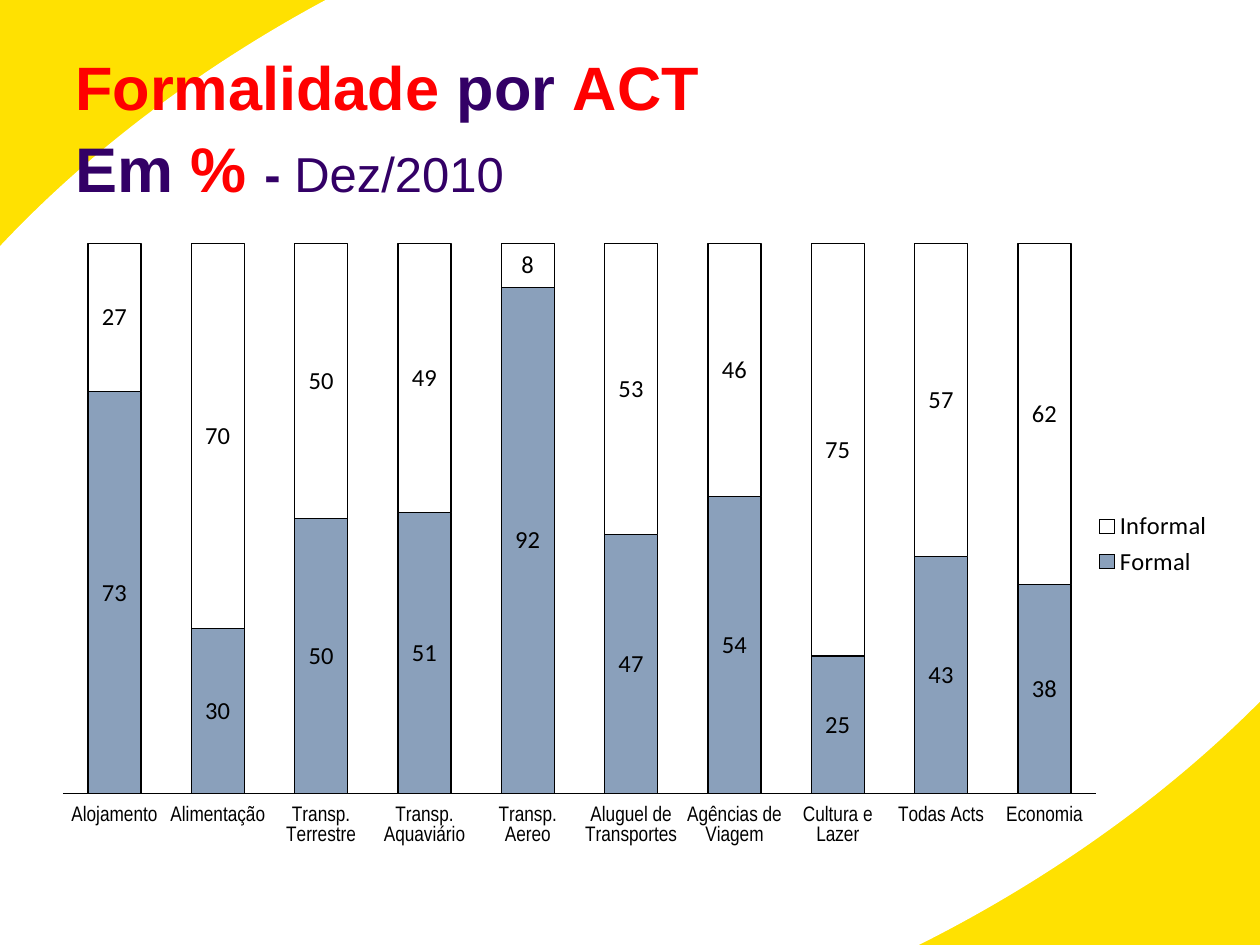
from dataclasses import dataclass

from lxml import etree
from pptx import Presentation
from pptx.chart.data import CategoryChartData
from pptx.dml.color import RGBColor
from pptx.enum.chart import (XL_CHART_TYPE, XL_LEGEND_POSITION, XL_TICK_LABEL_POSITION,
                             XL_TICK_MARK)
from pptx.enum.shapes import MSO_SHAPE
from pptx.enum.text import MSO_ANCHOR
from pptx.oxml import parse_xml
from pptx.oxml.ns import nsdecls, qn
from pptx.util import Pt

STACKED_100 = XL_CHART_TYPE.COLUMN_STACKED_100
LEGEND_RIGHT = XL_LEGEND_POSITION.RIGHT
TICK_NONE = XL_TICK_MARK.NONE
LABELS_LOW = XL_TICK_LABEL_POSITION.LOW
ELLIPSE = MSO_SHAPE.OVAL
TOP = MSO_ANCHOR.TOP
EMU_PER_PX = 914400 / 126


@dataclass(frozen=True)
class Theme:
    yellow: str = "FFE101"
    white: str = "FFFFFF"
    black: str = "000000"
    red: str = "FF0000"
    purple: str = "330066"
    blue: str = "1F497D"
    blue_opacity: int = 52
    title_font: str = "Arial"
    chart_font: str = "Calibri"
    category_font: str = "Arial Narrow"
    title_size: int = 35
    unit_size: int = 36
    date_size: int = 28
    chart_size: int = 11
    category_size: int = 12
    label_size: int = 14


THEME = Theme()

# Share of formal jobs in each activity, in %; the rest is informal
FORMAL_SHARE = {
    "Alojamento": 73,
    "Alimentação": 30,
    "Transp. Terrestre": 50,
    "Transp. Aquaviário": 51,
    "Transp. Aereo": 92,
    "Aluguel de Transportes": 47,
    "Agências de Viagem": 54,
    "Cultura e Lazer": 25,
    "Todas Acts": 43,
    "Economia": 38,
}


def px(length):
    return round(length * EMU_PER_PX)


def box(*lengths):
    return [px(length) for length in lengths]


def rgb(color):
    return RGBColor.from_string(color)


def style_font(font, size, name, color=THEME.black, bold=False):
    font.size = Pt(size)
    font.name = name
    font.color.rgb = rgb(color)
    font.bold = bold


def add_text(paragraph, text, **style):
    run = paragraph.add_run()
    run.text = text
    style_font(run.font, **style)


def add_backdrop(slide):
    slide.background.fill.solid()
    slide.background.fill.fore_color.rgb = rgb(THEME.yellow)
    oval = slide.shapes.add_shape(ELLIPSE, *box(-253, -92, 1787, 1110))
    oval.rotation = 335.5
    oval.shadow.inherit = False
    oval.fill.solid()
    oval.fill.fore_color.rgb = rgb(THEME.white)
    oval.line.fill.background()


def add_title(slide, lines):
    frame = slide.shapes.add_textbox(*box(63, 36, 1133, 179)).text_frame
    frame.word_wrap = True
    frame.vertical_anchor = TOP
    for index, line in enumerate(lines):
        paragraph = frame.add_paragraph() if index else frame.paragraphs[0]
        paragraph.line_spacing = 1.09
        for text, size, color, bold in line:
            add_text(paragraph, text, size=size, name=THEME.title_font,
                     color=color, bold=bold)


def set_plot_layout(chart, x, y, w, h):
    """Fix the inner plot area, in fractions of the chart."""
    plot_area = chart._chartSpace.chart.plotArea
    for old in plot_area.findall(qn("c:layout")):
        plot_area.remove(old)
    parts = "".join(f'<c:{tag} val="{value}"/>' for tag, value in (
        ("layoutTarget", "inner"), ("xMode", "edge"), ("yMode", "edge"),
        ("x", x), ("y", y), ("w", w), ("h", h)))
    plot_area.insert(0, parse_xml(
        f'<c:layout {nsdecls("c")}><c:manualLayout>{parts}</c:manualLayout></c:layout>'))


def style_series(series, color, opacity=100):
    series.format.fill.solid()
    series.format.fill.fore_color.rgb = rgb(color)
    if opacity < 100:
        fill_color = series._element.find(f'.//{qn("a:srgbClr")}')
        etree.SubElement(fill_color, qn("a:alpha"), val=str(opacity * 1000))
    series.format.line.color.rgb = rgb(THEME.black)
    series.format.line.width = Pt(0.75)
    labels = series.data_labels
    labels.show_value = True
    labels.number_format = "#,##0"
    labels.number_format_is_linked = False
    style_font(labels.font, THEME.label_size, THEME.chart_font)


def add_formality_chart(slide):
    data = CategoryChartData()
    data.categories = list(FORMAL_SHARE)
    data.add_series("Formal", FORMAL_SHARE.values())
    data.add_series("Informal", [100 - share for share in FORMAL_SHARE.values()])
    chart = slide.shapes.add_chart(STACKED_100, *box(44, 224, 1181, 640), data).chart
    chart.has_title = False
    style_font(chart.font, THEME.chart_size, THEME.chart_font)
    set_plot_layout(chart, 0.016, 0.03, 0.875, 0.86)

    # Columns
    plot = chart.plots[0]
    plot.gap_width = 95
    plot.overlap = 100
    plot.vary_by_categories = False
    formal, informal = plot.series
    style_series(formal, THEME.blue, THEME.blue_opacity)
    style_series(informal, THEME.white)

    # Axes
    activities = chart.category_axis
    activities.major_tick_mark = TICK_NONE
    activities.tick_label_position = LABELS_LOW
    activities.format.line.color.rgb = rgb(THEME.black)
    activities.format.line.width = Pt(0.75)
    style_font(activities.tick_labels.font, THEME.category_size, THEME.category_font)
    shares = chart.value_axis
    shares.visible = False
    shares.has_major_gridlines = False
    shares.maximum_scale = 1
    shares.minimum_scale = 0
    shares.major_unit = 0.2

    # Legend
    chart.has_legend = True
    chart.legend.position = LEGEND_RIGHT
    chart.legend.include_in_layout = False
    style_font(chart.legend.font, THEME.label_size, THEME.chart_font)


def main():
    deck = Presentation()
    deck.slide_width, deck.slide_height = box(1260, 945)
    slide = deck.slides.add_slide(deck.slide_layouts[6])
    add_backdrop(slide)
    add_title(slide, [
        [("Formalidade", THEME.title_size, THEME.red, True),
         (" por ", THEME.title_size, THEME.purple, True),
         ("ACT", THEME.title_size, THEME.red, True)],
        [("Em ", THEME.unit_size, THEME.purple, True),
         ("% ", THEME.unit_size, THEME.red, True),
         ("- ", THEME.date_size, THEME.purple, True),
         ("Dez/2010", THEME.date_size, THEME.purple, False)],
    ])
    add_formality_chart(slide)
    deck.save("out.pptx")


if __name__ == "__main__":
    main()
